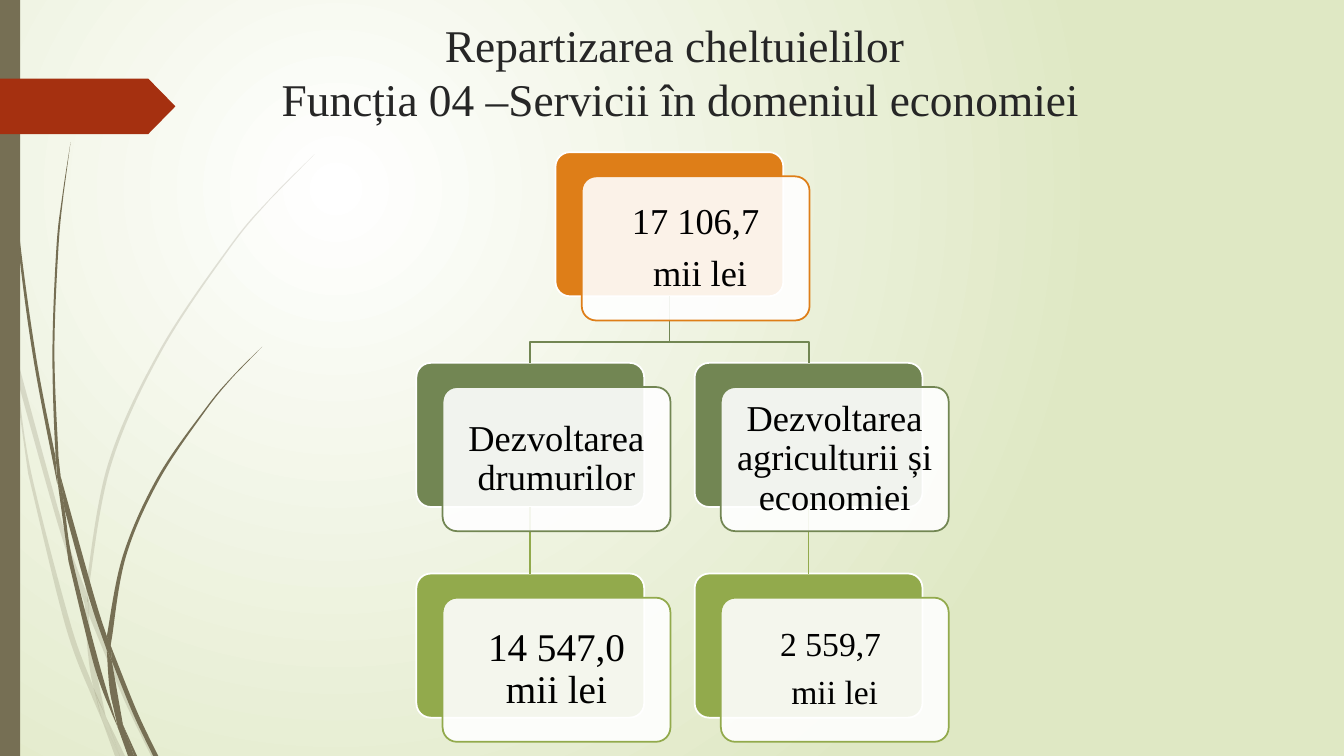
from lxml import etree
from pptx import Presentation
from pptx import util as u
from pptx.dml.color import RGBColor
from pptx.enum import shapes, text
from pptx.oxml.ns import qn

FONT = "Times New Roman"
COLORS = {
    "white": "FFFFFF", "pale": "DFE8C4", "bark": "766F54", "red": "A53010",
    "orange": "DE7E18", "green": "728653", "lime": "92AA4C",
    "title": "262626", "black": "000000",
}
CARD_W, CARD_H = 2.26, 1.43
SHIFT = (0.26, 0.24)  # front panel relative to the coloured card
ROWS = [1.51, 3.6, 5.69]
LEFT_X, MIDDLE_X, RIGHT_X = 4.13, 5.51, 6.89

# Grass blades: knots of one edge, then of the edge back
FAINT_BLADES = [
    ([(.11, 3.5), (.09, 3.22), (0, 2.82)], [(0, 2.99), (.1, 3.44)]),
    ([(.14, 3.45), (.62, 5.2), (.85, 5.86)], [(.84, 5.99), (.58, 5.22), (.17, 3.76)]),
    ([(.88, 5.96), (1.27, 6.92), (1.55, 7.5)], [(1.5, 7.5), (1.23, 6.94), (.88, 6.1)]),
    ([(1.05, 7.11), (1.24, 7.5)], [(1.19, 7.5)]),
    ([(.11, 3.5), (.17, 3.76), (.31, 4.69), (.7, 6.19), (.93, 6.83), (1.01, 7.14)],
     [(.92, 6.93), (.65, 6.21), (.28, 4.7)]),
    ([(.84, 5.99), (.87, 6.46), (.93, 6.83), (1.05, 7.11)], [(.91, 6.46), (.88, 6.1)]),
    ([(3.12, 1.53), (2.68, 1.97), (2.28, 2.44), (1.58, 3.48), (1.07, 4.61), (.85, 5.84)],
     [(.88, 5.96), (.88, 5.84), (1.1, 4.62), (1.6, 3.49), (2.29, 2.45), (2.68, 1.98)]),
    ([(1.01, 7.14), (1.14, 7.5)], [(1.19, 7.5)]),
    ([(.85, 5.86), (.88, 5.96), (.88, 6.1)], [(.84, 5.99)]),
    ([(.93, 6.83), (1.05, 7.11), (1.19, 7.5)], [(1.01, 7.14)]),
]
DARK_BLADES = [
    ([(.03, 0), (.07, 1.1), (.17, 2.33), (.33, 3.55), (.57, 4.81)],
     [(.55, 4.53), (.36, 3.55), (.19, 2.32), (.08, 1.09), (.04, 0)]),
    ([(.6, 4.72), (.93, 5.9), (1.06, 6.31)], [(1.06, 6.45), (.88, 5.92), (.64, 5.05)]),
    ([(1.1, 6.41), (1.36, 7.06), (1.57, 7.5)], [(1.52, 7.5), (1.32, 7.08), (1.11, 6.56)]),
    ([(.57, 4.77), (.64, 5.05), (.72, 5.56), (.98, 6.57), (1.17, 7.22)],
     [(1.11, 7.08), (.93, 6.59), (.68, 5.57)]),
    ([(.7, 1.41), (.62, 1.93), (.56, 2.45), (.52, 3.49), (.55, 4.49), (.6, 4.72)],
     [(.58, 4.53), (.54, 3.49), (.58, 2.45), (.63, 1.93)]),
    ([(1.22, 7.19), (1.36, 7.5)], [(1.33, 7.5)]),
    ([(.55, 4.49), (.6, 4.72), (.64, 5.05)], [(.57, 4.77)]),
    ([(2.6, 3.44), (2.31, 3.73), (2.04, 4.05), (1.56, 4.74), (1.22, 5.51), (1.06, 6.31)],
     [(1.1, 6.41), (1.11, 6.33), (1.25, 5.52), (1.58, 4.76), (2.05, 4.06), (2.31, 3.74)]),
    ([(1.17, 7.22), (1.31, 7.5)], [(1.27, 7.5)]),
    ([(1.06, 6.45), (1.1, 6.91), (1.22, 7.19)], [(1.11, 6.56)]),
    ([(1.06, 6.31), (1.1, 6.41), (1.11, 6.56)], [(1.06, 6.45)]),
    ([(1.1, 6.91), (1.22, 7.19), (1.33, 7.5)], [(1.3, 7.5), (1.17, 7.22)]),
]


def rgb(name):
    return RGBColor.from_string(COLORS[name])


def paint(shape, fill, line=None, opacity=100):
    shape.shadow.inherit = False
    if fill:
        shape.fill.solid()
        shape.fill.fore_color.rgb = rgb(fill)
        if opacity < 100:
            color = shape.fill._xPr.find(".//" + qn("a:srgbClr"))
            etree.SubElement(color, qn("a:alpha"), val=str(opacity * 1000))
    else:
        shape.fill.background()
    if line:
        shape.line.color.rgb = rgb(line)
        shape.line.width = u.Pt(1.25)
    else:
        shape.line.fill.background()


def add_background(slide):
    fill = slide.background.fill
    fill.gradient()
    for stop, name, position in zip(fill.gradient_stops, ("white", "pale"), (0, 1)):
        stop.color.rgb = rgb(name)
        stop.position = position
    gradient = slide._element.find(".//" + qn("a:gradFill"))
    gradient.remove(gradient.find(qn("a:lin")))
    circle = etree.SubElement(gradient, qn("a:path"), {"path": "circle"})
    etree.SubElement(circle, qn("a:fillToRect"), l="50000", t="50000", r="100000", b="100000")


def add_outline(slide, points, close):
    points = [(u.Inches(x), u.Inches(y)) for x, y in points]
    builder = slide.shapes.build_freeform(*points[0])
    builder.add_line_segments(points[1:], close=close)
    return builder.convert_to_shape()


def add_blade(slide, edge, edge_back, opacity):
    blade = add_outline(slide, edge + edge_back, True)
    paint(blade, "bark", opacity=opacity)
    # Turn the lines along each edge into smooth curves
    knots = [(int(p.get("x")), int(p.get("y"))) for p in blade._element.iter(qn("a:pt"))]
    split = len(edge)
    for end, segment in enumerate(list(blade._element.iter(qn("a:lnTo"))), 1):
        if end == split:
            continue
        low, high = (0, split - 1) if end < split else (split, len(knots) - 1)
        a, b, c, d = (knots[min(max(k, low), high)] for k in range(end - 2, end + 2))
        controls = ([q + (r - p) / 6 for p, q, r in zip(a, b, c)],
                    [r - (s - q) / 6 for q, r, s in zip(b, c, d)])
        curve = etree.Element(qn("a:cubicBezTo"))
        for x, y in (*controls, c):
            etree.SubElement(curve, qn("a:pt"), x=str(round(x)), y=str(round(y)))
        segment.getparent().replace(segment, curve)


def add_box(slide, kind, x, y, width, height, fill, line=None, opacity=100, adjustment=None):
    shape = slide.shapes.add_shape(kind, *map(u.Inches, (x, y, width, height)))
    if adjustment is not None:
        shape.adjustments[0] = adjustment
    paint(shape, fill, line, opacity)
    return shape


def add_card(slide, x, y, fill, line, opacity=100):
    return add_box(slide, shapes.MSO_SHAPE.ROUNDED_RECTANGLE, x, y, CARD_W, CARD_H,
                   fill, line, opacity, 0.1)


def add_run(paragraph, words, size, color):
    run = paragraph.add_run()
    run.text = words
    run.font.name = FONT
    run.font.size = u.Pt(size)
    run.font.color.rgb = rgb(color)


def add_panel(slide, x, y, color, lines, size):
    frame = add_card(slide, x + SHIFT[0], y + SHIFT[1], "white", color, 90).text_frame
    frame.word_wrap = True
    frame.vertical_anchor = text.MSO_ANCHOR.MIDDLE
    inset = u.Inches(round(size / 240, 2))
    frame.margin_left = frame.margin_right = frame.margin_top = frame.margin_bottom = inset
    for index, words in enumerate(lines):
        paragraph = frame.add_paragraph() if index else frame.paragraphs[0]
        paragraph.alignment = text.PP_ALIGN.CENTER
        paragraph.line_spacing = 0.9
        paragraph.space_after = u.Pt(round(0.35 * size, 1))
        add_run(paragraph, words, size, "black")


def add_title(slide, first, second):
    box = slide.shapes.add_textbox(*map(u.Inches, (1.5, 0.12, 10.5, 1.12)))
    box.text_frame.word_wrap = True
    paragraph = box.text_frame.paragraphs[0]
    paragraph.alignment = text.PP_ALIGN.CENTER
    add_run(paragraph, first, 32.4, "title")
    paragraph.add_line_break()
    add_run(paragraph, second, 32.4, "title")


def add_link(slide, upper, lower, color):
    link = slide.shapes.add_connector(shapes.MSO_CONNECTOR.STRAIGHT, 0, 0, 0, 0)
    link.begin_connect(upper, 2)
    link.end_connect(lower, 0)
    link.line.color.rgb = rgb(color)
    link.line.width = u.Pt(1.25)
    etree.SubElement(link._element.spPr, qn("a:effectLst"))


def add_branch(slide, child_x):
    start_x, end_x, bend_y = MIDDLE_X + CARD_W / 2, child_x + CARD_W / 2, 3.39
    points = [(start_x, ROWS[0] + CARD_H), (start_x, bend_y), (end_x, bend_y), (end_x, ROWS[1])]
    paint(add_outline(slide, points, False), None, "green")


def main():
    presentation = Presentation()
    presentation.slide_width, presentation.slide_height = u.Inches(13.33), u.Inches(7.5)
    slide = presentation.slides.add_slide(presentation.slide_layouts[6])
    # Backdrop
    add_background(slide)
    for blades, opacity in ((FAINT_BLADES, 20), (DARK_BLADES, 100)):
        for edges in blades:
            add_blade(slide, *edges, opacity)
    add_box(slide, shapes.MSO_SHAPE.RECTANGLE, 0, 0, 0.2, 7.5, "bark")
    add_box(slide, shapes.MSO_SHAPE.PENTAGON, 0, 0.78, 1.74, 0.55, "red", adjustment=0.49)
    add_title(slide, "Repartizarea cheltuielilor ", "Funcția 04 –Servicii în domeniul economiei")
    # Hierarchy: coloured cards, links, then text panels
    nodes = [
        (MIDDLE_X, ROWS[0], "orange", ["17 106,7", " mii lei"], 26),
        (LEFT_X, ROWS[1], "green", ["Dezvoltarea drumurilor"], 26),
        (LEFT_X, ROWS[2], "lime", ["14 547,0 mii lei"], 28),
        (RIGHT_X, ROWS[1], "green", ["Dezvoltarea agriculturii și economiei"], 26),
        (RIGHT_X, ROWS[2], "lime", ["2 559,7 ", "mii lei"], 24),
    ]
    cards = [add_card(slide, x, y, color, "white") for x, y, color, _, _ in nodes]
    for child_x, upper, lower in ((LEFT_X, *cards[1:3]), (RIGHT_X, *cards[3:5])):
        add_branch(slide, child_x)
        add_link(slide, upper, lower, "lime")
    for node in nodes:
        add_panel(slide, *node)
    presentation.save("out.pptx")


if __name__ == "__main__":
    main()
